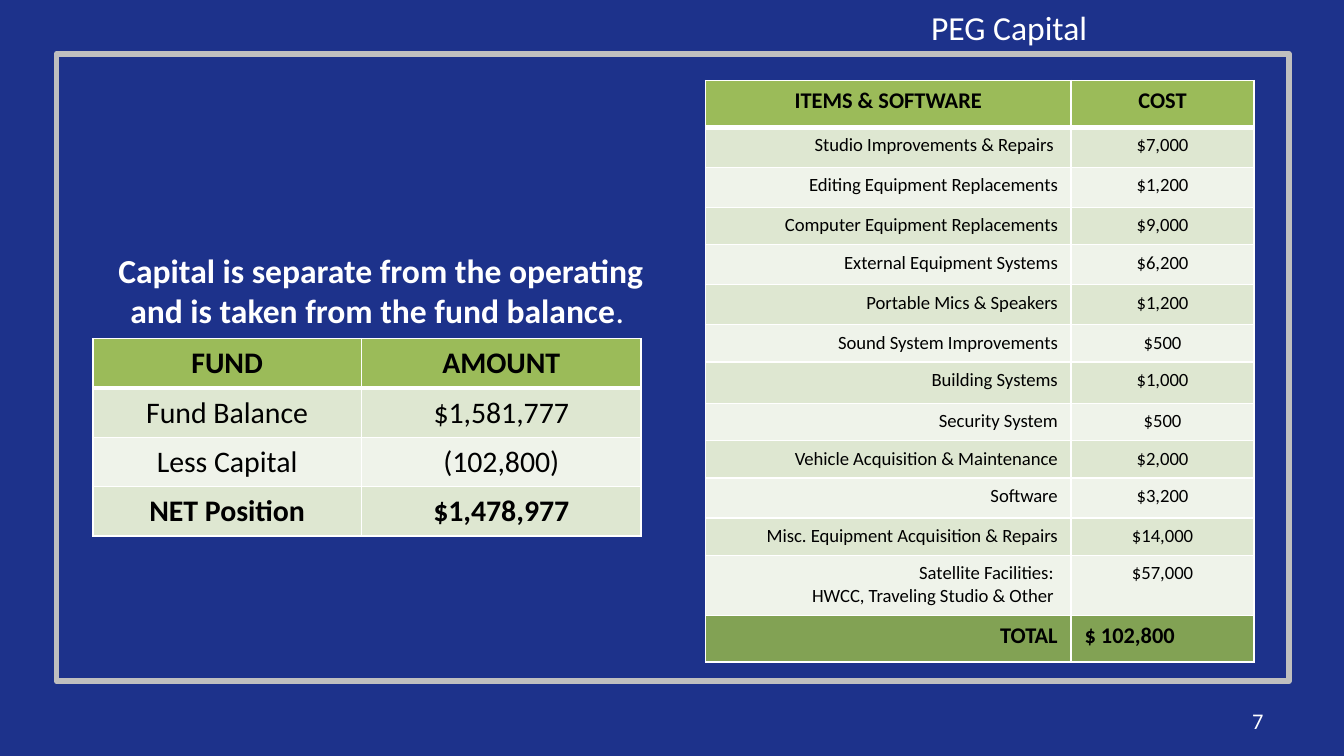
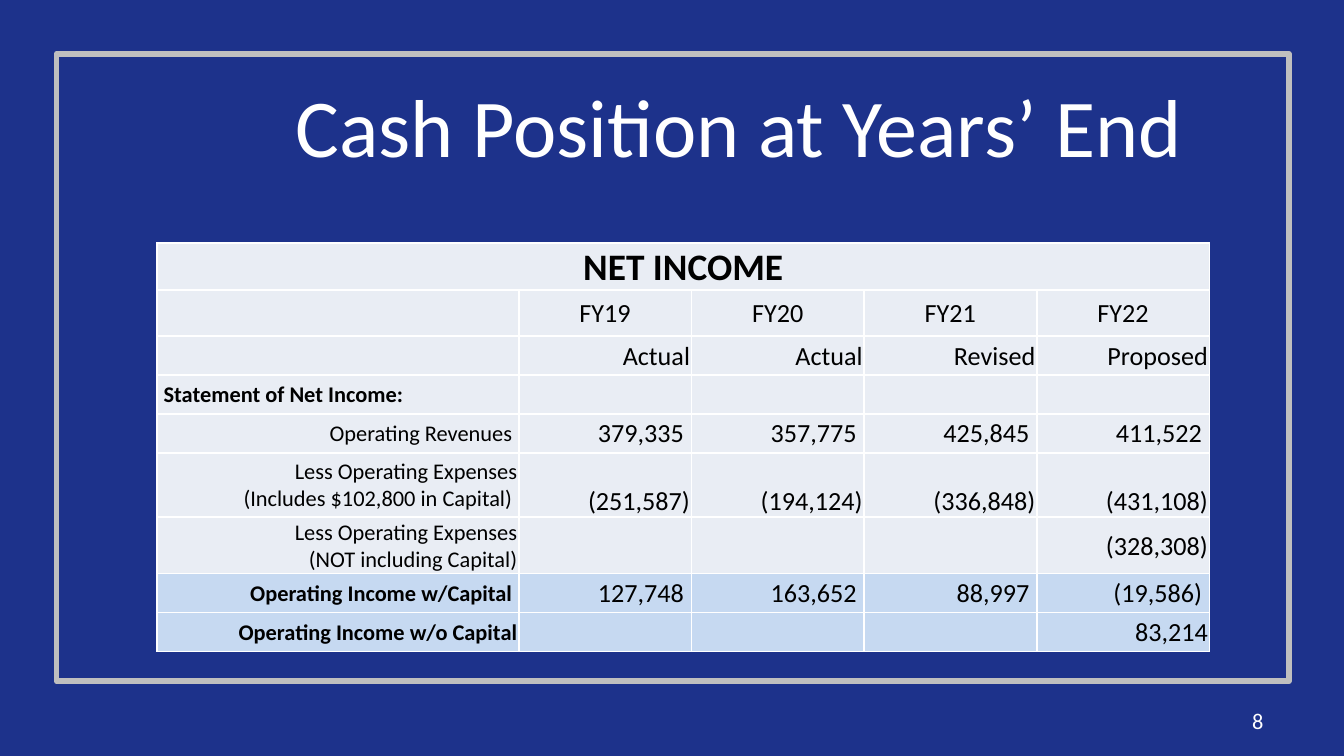
from dataclasses import dataclass

from lxml import etree
from pptx import Presentation
from pptx import util as u
from pptx.dml.color import RGBColor
from pptx.enum import shapes, text
from pptx.oxml import ns
from pptx.slide import Slide
from pptx.table import _Cell
from pptx.text.text import _Paragraph

FONT = "Calibri"
COLORS = {
    "background": "1D328B",
    "frame": "BFBFBF",
    "white": "FFFFFF",
    "black": "000000",
    "header": "9BBB59",
    "band_dark": "DEE7D1",
    "band_light": "EFF3EA",
    "total": "82A254",
    "income": "E9EDF4",
    "result": "C6D9F1",
}
LEFT = text.PP_ALIGN.LEFT
CENTER = text.PP_ALIGN.CENTER
RIGHT = text.PP_ALIGN.RIGHT
TOP = text.MSO_ANCHOR.TOP
MIDDLE = text.MSO_ANCHOR.MIDDLE
BOTTOM = text.MSO_ANCHOR.BOTTOM
CELL_MARGINS = (0.1, 0.05, 0.1, 0.05)
TIGHT_MARGINS = (0.01, 0.01, 0.01, 0)


@dataclass(frozen=True)
class Box:
    left: float
    top: float
    width: float
    height: float

    def lengths(self) -> tuple[u.Length, ...]:
        return tuple(u.Inches(v) for v in (self.left, self.top, self.width, self.height))


@dataclass(frozen=True)
class Entry:
    words: str
    fill: str
    size: float
    bold: bool = False
    align: text.PP_ALIGN = CENTER
    anchor: text.MSO_ANCHOR = TOP


@dataclass(frozen=True)
class TableLayout:
    box: Box
    columns: list[float]
    rows: list[float]
    margins: tuple[float, ...] = CELL_MARGINS
    header_rule: float = 1


CAPITAL_ITEMS = [
    ("Studio Improvements & Repairs ", "$7,000"),
    ("Editing Equipment Replacements", "$1,200"),
    ("Computer Equipment Replacements", "$9,000"),
    ("External Equipment Systems", "$6,200"),
    ("Portable Mics & Speakers", "$1,200"),
    ("Sound System Improvements", "$500"),
    ("Building Systems", "$1,000"),
    ("Security System", "$500"),
    ("Vehicle Acquisition & Maintenance", "$2,000"),
    ("Software", "$3,200"),
    ("Misc. Equipment Acquisition & Repairs", "$14,000"),
    ("Satellite Facilities: \nHWCC, Traveling Studio & Other ", "$57,000"),
]
FUND_ROWS = [
    ("Fund Balance", "$1,581,777"),
    ("Less Capital", "(102,800)"),
    ("NET Position", "$1,478,977"),
]
INCOME_ROWS = [
    ("NET INCOME", "", "", "", ""),
    ("", "FY19", "FY20", "FY21", "FY22"),
    ("", "Actual", "Actual", "Revised", "Proposed"),
    (" Statement of Net Income:", "", "", "", ""),
    ("Operating Revenues ", "379,335 ", "357,775 ", "425,845 ", "411,522 "),
    ("Less Operating Expenses\n(Includes $102,800 in Capital) ",
     "(251,587)", "(194,124)", "(336,848)", "(431,108)"),
    ("Less Operating Expenses\n(NOT including Capital)", "", "", "", "(328,308)"),
    ("Operating Income w/Capital ", "127,748 ", "163,652 ", "88,997 ", "(19,586) "),
    ("Operating Income w/o Capital", "", "", "", "83,214"),
]
YEARS_ROW, STATEMENT_ROW, EXPENSES_ROW, FIRST_RESULT_ROW = 1, 3, 5, 7


def color(name: str) -> RGBColor:
    return RGBColor.from_string(COLORS[name])


def style_paragraph(paragraph: _Paragraph, size: float, color_name: str,
                    bold: bool, align: text.PP_ALIGN) -> None:
    paragraph.alignment = align
    paragraph.font.name = FONT
    paragraph.font.size = u.Pt(size)
    paragraph.font.bold = bold
    paragraph.font.color.rgb = color(color_name)


def add_text(slide: Slide, box: Box, words: str, size: float,
             align: text.PP_ALIGN = LEFT, anchor: text.MSO_ANCHOR = TOP,
             bold: bool = False, grow: bool = False) -> _Paragraph:
    frame = slide.shapes.add_textbox(*box.lengths()).text_frame
    frame.word_wrap = True
    frame.vertical_anchor = anchor
    if grow:
        frame.auto_size = text.MSO_AUTO_SIZE.SHAPE_TO_FIT_TEXT
    paragraph = frame.paragraphs[0]
    paragraph.add_run().text = words
    style_paragraph(paragraph, size, "white", bold, align)
    return paragraph


def add_base_slide(presentation: Presentation, number: int) -> Slide:
    slide = presentation.slides.add_slide(presentation.slide_layouts[6])
    slide.background.fill.solid()
    slide.background.fill.fore_color.rgb = color("background")
    border = slide.shapes.add_shape(
        shapes.MSO_SHAPE.RECTANGLE, *Box(0.42, 0.4, 9.17, 4.67).lengths())
    border.shadow.inherit = False
    border.fill.background()
    border.line.color.rgb = color("frame")
    border.line.width = u.Pt(3)
    add_text(slide, Box(7.17, 5.21, 2.33, 0.3), str(number), 12, RIGHT, MIDDLE)
    return slide


def set_borders(cell: _Cell, top: float, bottom: float) -> None:
    properties = cell._tc.get_or_add_tcPr()
    for side, width in (("L", 1), ("R", 1), ("T", top), ("B", bottom)):
        line = etree.SubElement(properties, ns.qn(f"a:ln{side}"), w=str(u.Pt(width)))
        fill = etree.SubElement(line, ns.qn("a:solidFill"))
        etree.SubElement(fill, ns.qn("a:srgbClr"), val=COLORS["white"])


def fill_cell(cell: _Cell, entry: Entry, margins: tuple[float, ...]) -> None:
    cell.fill.solid()
    cell.fill.fore_color.rgb = color(entry.fill)
    cell.margin_left, cell.margin_top, cell.margin_right, cell.margin_bottom = (
        u.Inches(margin) for margin in margins)
    cell.vertical_anchor = entry.anchor
    cell.text_frame.text = entry.words
    for paragraph in cell.text_frame.paragraphs:
        style_paragraph(paragraph, entry.size, "black", entry.bold, entry.align)
        if not entry.words:
            ending = etree.SubElement(paragraph._p, ns.qn("a:endParaRPr"))
            ending.set("sz", str(int(entry.size * 100)))


def add_grid(slide: Slide, layout: TableLayout, entries: list[list[Entry]],
             merge_title: bool = False) -> None:
    table = slide.shapes.add_table(
        len(layout.rows), len(layout.columns), *layout.box.lengths()).table
    table.first_row = False
    table.horz_banding = False
    for column, width in zip(table.columns, layout.columns):
        column.width = u.Inches(width)
    for row, height in zip(table.rows, layout.rows):
        row.height = u.Inches(height)
    for row_index, row_entries in enumerate(entries):
        top = layout.header_rule if row_index == 1 else 1
        bottom = layout.header_rule if row_index == 0 else 1
        for column_index, entry in enumerate(row_entries):
            cell = table.cell(row_index, column_index)
            set_borders(cell, top, bottom)
            fill_cell(cell, entry, layout.margins)
    if merge_title:
        table.cell(0, 0).merge(table.cell(0, len(layout.columns) - 1))


def band(index: int) -> str:
    return "band_light" if index % 2 else "band_dark"


def header(size: float, *words: str) -> list[Entry]:
    return [Entry(word, "header", size, True) for word in words]


def capital_entries() -> list[list[Entry]]:
    items = [
        [Entry(item, band(index), 10, align=RIGHT), Entry(cost, band(index), 10)]
        for index, (item, cost) in enumerate(CAPITAL_ITEMS)
    ]
    total = [Entry("TOTAL", "total", 12, True, RIGHT),
             Entry("$ 102,800", "total", 12, True, LEFT)]
    return [header(12, "ITEMS & SOFTWARE", "COST"), *items, total]


def fund_entries() -> list[list[Entry]]:
    last = len(FUND_ROWS) - 1
    return [header(16, "FUND", "AMOUNT")] + [
        [Entry(words, band(index), 16, index == last) for words in row]
        for index, row in enumerate(FUND_ROWS)
    ]


def income_entry(row: int, column: int, words: str) -> Entry:
    fill = "result" if row >= FIRST_RESULT_ROW else "income"
    if row == 0:
        return Entry(words, fill, 20 if words else 14, True, CENTER, MIDDLE)
    if column == 0:
        bold = row == STATEMENT_ROW or row >= FIRST_RESULT_ROW
        align = LEFT if row == STATEMENT_ROW else RIGHT
        return Entry(words, fill, 12, bold, align, MIDDLE)
    align = CENTER if row == YEARS_ROW else RIGHT
    anchor = BOTTOM if row == EXPENSES_ROW else MIDDLE
    return Entry(words, fill, 14, False, align, anchor)


def build_capital_slide(presentation: Presentation) -> None:
    slide = add_base_slide(presentation, 7)
    box = Box(5.25, 0.6, 4.08, 4.33)
    shares = [0.35, 0.3, 0.3, 0.28, 0.3, 0.3, 0.28,
              0.31, 0.28, 0.28, 0.3, 0.28, 0.45, 0.35]
    rows = [share * box.height / sum(shares) for share in shares]
    add_grid(slide, TableLayout(box, [2.72, 1.36], rows, header_rule=3), capital_entries())
    add_text(slide, Box(6.83, 0, 1.67, 0.42), "PEG Capital", 18, grow=True)
    fund = TableLayout(Box(0.69, 2.52, 4.08, 1.47), [2, 2.08],
                       [0.35, 0.3, 0.3, 0.28], header_rule=3)
    add_grid(slide, fund, fund_entries())
    note = add_text(
        slide, Box(0.67, 1.81, 4.33, 0.71),
        "Capital is separate from the operating and is taken from the fund balance",
        18, CENTER, bold=True, grow=True)
    ending = note.add_run()
    ending.text = ". "
    ending.font.bold = False


def build_cash_slide(presentation: Presentation) -> None:
    slide = add_base_slide(presentation, 8)
    add_text(slide, Box(1, 0.46, 9, 0.94), "Cash Position at Years’ End", 44, CENTER, MIDDLE)
    box = Box(1.17, 1.81, 7.83, 3.01)
    label_width = 2.69
    income = TableLayout(
        box, [label_width] + [(box.width - label_width) / 4] * 4,
        [0.35, 0.34, 0.29, 0.29, 0.29, 0.48, 0.42, 0.29, 0.29], TIGHT_MARGINS)
    entries = [
        [income_entry(row, column, words) for column, words in enumerate(row_words)]
        for row, row_words in enumerate(INCOME_ROWS)
    ]
    add_grid(slide, income, entries, merge_title=True)


def main() -> None:
    presentation = Presentation()
    presentation.slide_width = u.Inches(10)
    presentation.slide_height = u.Inches(10 * 9 / 16)
    build_capital_slide(presentation)
    build_cash_slide(presentation)
    presentation.save("out.pptx")


if __name__ == "__main__":
    main()
